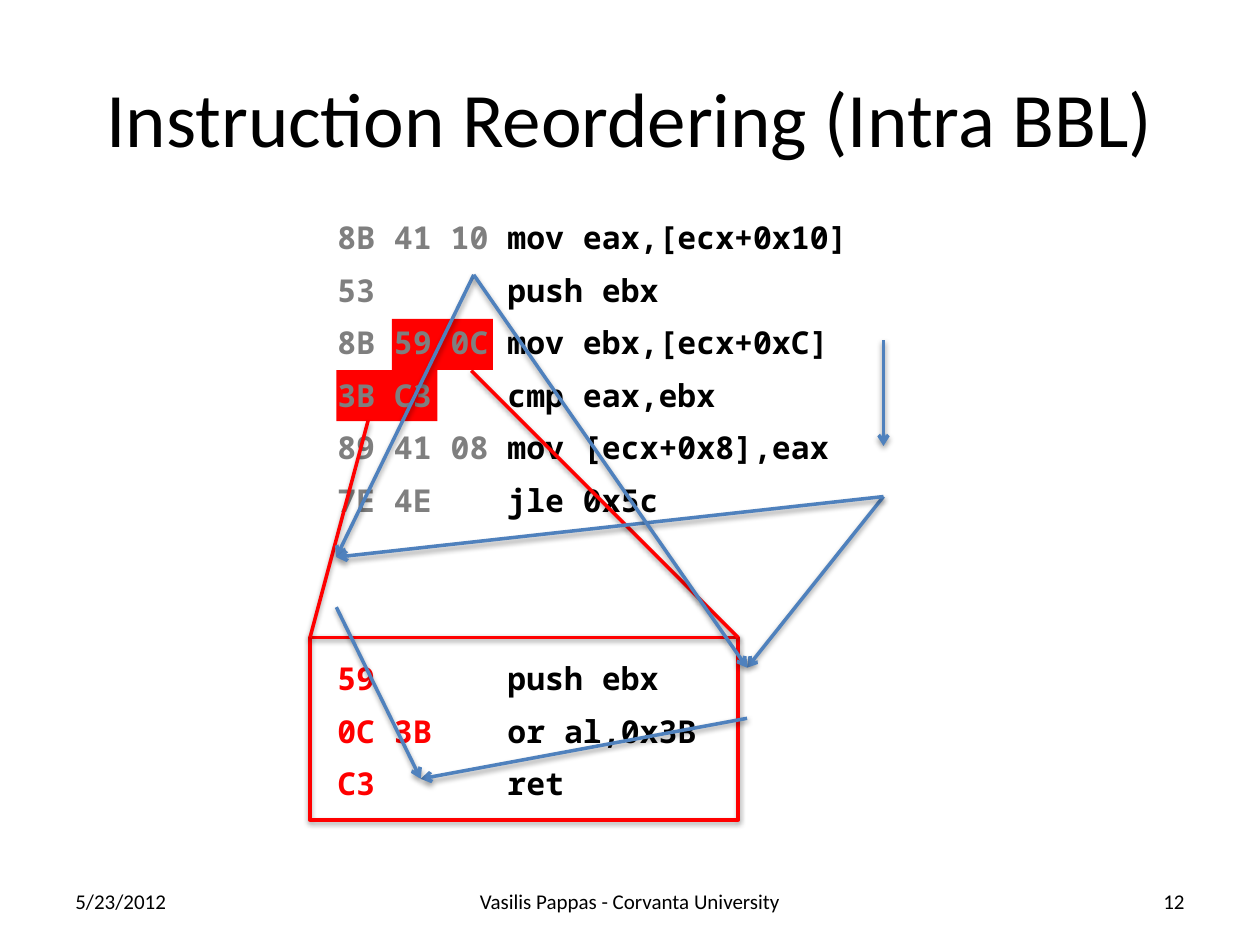
from lxml import etree
from pptx import Presentation
from pptx.dml.color import RGBColor
from pptx.enum.shapes import MSO_CONNECTOR, MSO_SHAPE
from pptx.enum.text import MSO_ANCHOR, PP_ALIGN
from pptx.oxml import parse_xml
from pptx.oxml.ns import nsdecls, qn
from pptx.util import Cm, Pt

BLACK = RGBColor(0x00, 0x00, 0x00)
GRAY = RGBColor(0x7F, 0x7F, 0x7F)
RED = RGBColor(0xFF, 0x00, 0x00)
BLUE = RGBColor(0x4F, 0x81, 0xBD)

ROW_PITCH = 1.06
CODE_LEFT = 6.55
MNEMONIC_COLUMN = 9  # characters before the mnemonic
CHAR_WIDTH = 0.381


def style_line(sp, color):
    """Give a shape or connector a 2 pt line and a soft shadow below it."""
    sp.line.color.rgb = color
    sp.line.width = Pt(2)
    sp._element.spPr.append(parse_xml(
        f'<a:effectLst {nsdecls("a")}>'
        '<a:outerShdw blurRad="40000" dist="20000" dir="5400000" rotWithShape="0">'
        '<a:srgbClr val="000000"><a:alpha val="38000"/></a:srgbClr>'
        '</a:outerShdw></a:effectLst>'))


def add_text(left, top, width, height, runs, size, font, align=PP_ALIGN.LEFT,
             anchor=MSO_ANCHOR.MIDDLE, bold=False):
    """Add a one-paragraph text box from (text, colour) runs; return the paragraph."""
    tf = s.shapes.add_textbox(Cm(left), Cm(top), Cm(width), Cm(height)).text_frame
    tf.word_wrap = True
    tf.vertical_anchor = anchor
    p = tf.paragraphs[0]
    p.alignment = align
    for text, color in runs:
        r = p.add_run()
        r.text = text
        r.font.size = Pt(size)
        r.font.name = font
        r.font.bold = bold
        r.font.color.rgb = color
    return p


prs = Presentation()
prs.slide_width, prs.slide_height = Cm(25.4), Cm(19.05)
s = prs.slides.add_slide(prs.slide_layouts[6])

# Highlighted bytes
for left, top in [(7.9, 6.43), (6.78, 7.46)]:
    sp = s.shapes.add_shape(MSO_SHAPE.RECTANGLE, Cm(left), Cm(top), Cm(2.04), Cm(1.03))
    sp.shadow.inherit = False
    sp.fill.solid()
    sp.fill.fore_color.rgb = RED
    sp.line.fill.background()

# Title and footer
add_text(1.27, 0.76, 22.86, 3.18, [("Instruction Reordering (Intra BBL)", BLACK)],
         44, "Calibri", PP_ALIGN.CENTER)
for left, width, text, align in [
    (1.27, 5.93, "5/23/2012", PP_ALIGN.LEFT),
    (18.2, 5.93, "12", PP_ALIGN.RIGHT),
    (8.68, 8.04, "Vasilis Pappas - Corvanta University", PP_ALIGN.CENTER),
]:
    add_text(left, 17.66, width, 1.01, [(text, BLACK)], 12, "Calibri", align)

# Code listings: bytes, then the mnemonic at a tab stop
program = [
    ("8B 41 10", "mov eax,[ecx+0x10]"),
    ("53", "push ebx"),
    ("8B 59 0C", "mov ebx,[ecx+0xC]"),
    ("3B C3", "cmp eax,ebx"),
    ("89 41 08", "mov [ecx+0x8],eax"),
    ("7E 4E", "jle 0x5c"),
]
gadget = [
    ("59", "push ebx"),
    ("0C 3B", "or al,0x3B"),
    ("C3", "ret"),
]
for rows, first_top, color in [(program, 4.27, GRAY), (gadget, 13.16, RED)]:
    for i, (code, mnemonic) in enumerate(rows):
        chars = max(17, MNEMONIC_COLUMN + len(mnemonic))
        p = add_text(CODE_LEFT, first_top + i * ROW_PITCH, 0.39 * chars + 0.6, 1.03,
                     [(code, color), ("\t" + mnemonic, BLACK)], 18,
                     "Noto Sans Mono", anchor=MSO_ANCHOR.TOP, bold=True)
        tabs = etree.SubElement(p._p.get_or_add_pPr(), qn("a:tabLst"))
        etree.SubElement(tabs, qn("a:tab"), algn="l",
                         pos=str(Cm(MNEMONIC_COLUMN * CHAR_WIDTH)))

# Gadget frame
frame = s.shapes.add_shape(MSO_SHAPE.RECTANGLE, Cm(6.25), Cm(12.85), Cm(8.63), Cm(3.68))
frame.fill.background()
style_line(frame, RED)

# Zoom lines to the frame, then dependency arrows
zoom_lines = [
    ((7.42, 8.48), (6.25, 12.85)),
    ((9.5, 7.47), (14.88, 12.85)),
]
load_eax, compare, jump = (9.55, 5.54), (17.81, 10.01), (8.48, 15.7)
store, push = (6.78, 11.23), (15.06, 13.46)
arrows = [
    (load_eax, store),
    ((17.81, 6.86), (17.81, 8.99)),
    (compare, push),
    ((15.06, 14.48), jump),
    ((6.78, 12.24), jump),
    (compare, store),
    (load_eax, push),
]
for lines, color in [(zoom_lines, RED), (arrows, BLUE)]:
    for (x1, y1), (x2, y2) in lines:
        line = s.shapes.add_connector(MSO_CONNECTOR.STRAIGHT,
                                      Cm(x1), Cm(y1), Cm(x2), Cm(y2))
        style_line(line, color)
        if lines is arrows:
            etree.SubElement(line.line._get_or_add_ln(), qn("a:tailEnd"), type="arrow")

prs.save("out.pptx")
